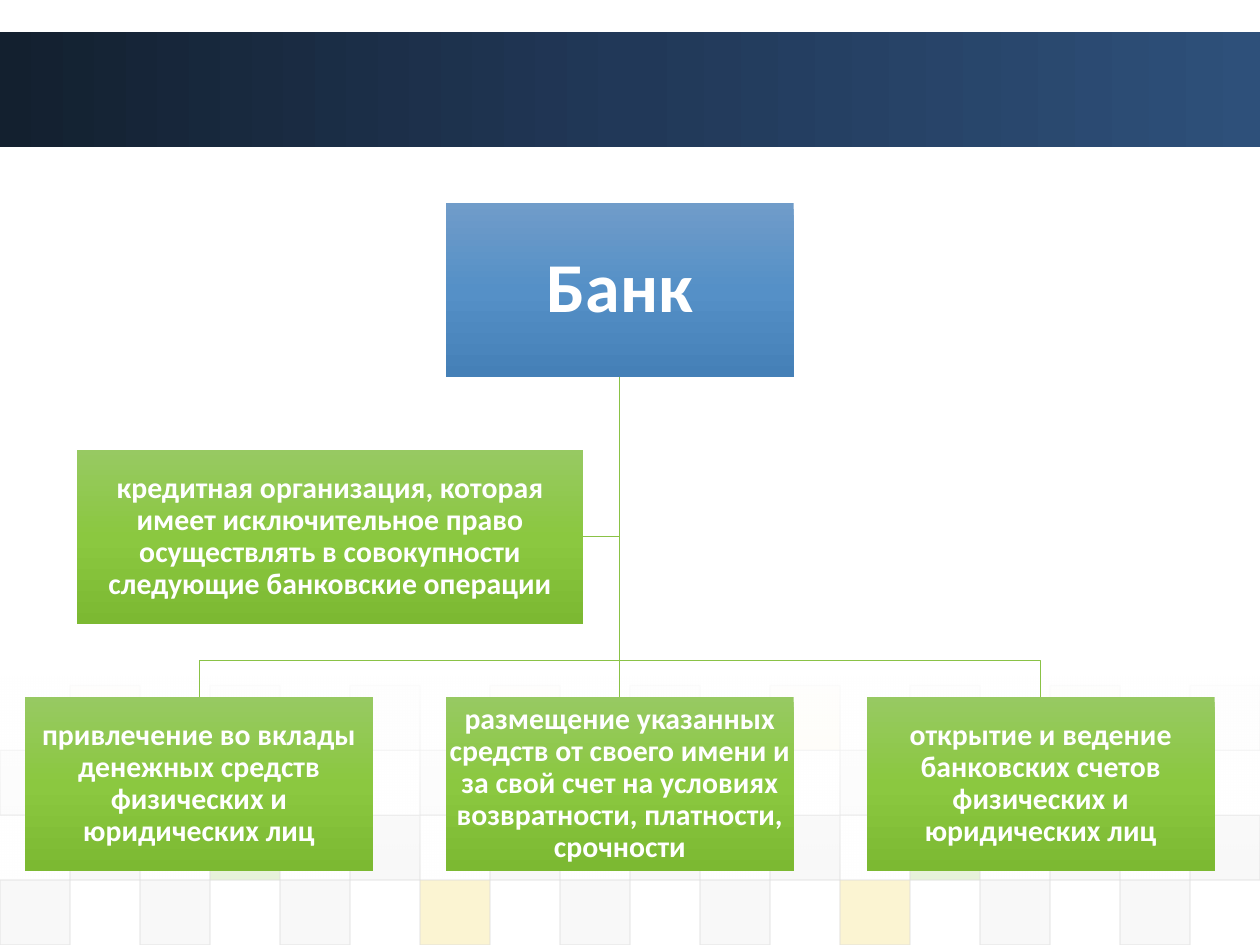
from dataclasses import dataclass

from lxml.etree import SubElement
from pptx import Presentation
from pptx.dml.color import RGBColor
from pptx.enum.shapes import MSO_CONNECTOR, MSO_SHAPE
from pptx.enum.text import MSO_ANCHOR, PP_ALIGN
from pptx.oxml.ns import qn
from pptx.util import Inches, Pt

W, H = 10, 7.5
COLORS = dict(grey="DDDDDD", light="EAEAEA", green="8AC246", yellow="EFC821", white="FFFFFF")
GRADIENTS = dict(
    header=["13202F", "213858", "2E507A"],
    blue=["709CC9", "5590C7", "4580B7"],
    green=["97C962", "8BC840", "7CB932"],
)

# Background mosaic: a checkerboard of 18 columns
TILE_W, TILE_H, MOSAIC_TOP = W / 18, 0.515, 5.44


@dataclass
class TileRow:
    first_col: int
    opacity: int
    tints: list[str]


TILE_ROWS = [
    TileRow(1, 5, "yellow light light yellow grey yellow light green light".split()),
    TileRow(0, 10, "grey grey grey grey green grey grey grey yellow".split()),
    TileRow(1, 20, "grey green grey grey grey grey green grey grey".split()),
    TileRow(0, 20, "grey grey grey yellow grey grey yellow grey grey".split()),
]

# Organisation chart
BOX_W, BOX_H, COL_STEP = 2.76, 1.38, 3.34
COLS = [0.2 + i * COL_STEP for i in range(3)]
CENTERS = [x + BOX_W / 2 for x in COLS]
ROOT_TOP, SIDE_TOP, LEAF_TOP = 1.61, 3.57, 5.53
SIDE_LEFT, SIDE_W = 0.61, 4.02
ROOT_BOTTOM, BUS_Y = ROOT_TOP + BOX_H, 5.24


@dataclass
class Box:
    text: str
    left: float
    top: float
    width: float = BOX_W
    gradient: str = "green"
    size: int = 17
    inset: float = 0.01


BOXES = [
    Box("Банк", COLS[1], ROOT_TOP, gradient="blue", size=40, inset=0.03),
    Box("привлечение во вклады денежных средств физических и юридических лиц",
        COLS[0], LEAF_TOP),
    Box("размещение указанных средств от своего имени и за свой счет на условиях "
        "возвратности, платности, срочности", COLS[1], LEAF_TOP),
    Box("открытие и ведение банковских счетов физических и юридических лиц",
        COLS[2], LEAF_TOP),
    Box("кредитная организация, которая имеет исключительное право осуществлять "
        "в совокупности следующие банковские операции", SIDE_LEFT, SIDE_TOP, SIDE_W),
]


def rgb(name: str) -> RGBColor:
    return RGBColor.from_string(COLORS[name])


def add_rect(shapes, left: float, top: float, width: float, height: float):
    sp = shapes.add_shape(MSO_SHAPE.RECTANGLE, *map(Inches, (left, top, width, height)))
    sp.shadow.inherit = False
    sp.line.fill.background()
    return sp


def set_opacity(color_el, percent: int) -> None:
    SubElement(color_el, qn("a:alpha")).set("val", str(percent * 1000))


def set_gradient(sp, colors: list[str], angle: int, opacities=()) -> None:
    """Spread the colours evenly; the angle runs clockwise in degrees."""
    sp.fill.gradient()
    grad = sp._element.spPr.find(qn("a:gradFill"))
    stops = grad.find(qn("a:gsLst"))
    stops.clear()
    for i, color in enumerate(colors):
        gs = SubElement(stops, qn("a:gs"), pos=str(100000 * i // (len(colors) - 1)))
        clr = SubElement(gs, qn("a:srgbClr"), val=color)
        if opacities:
            set_opacity(clr, opacities[i])
    grad.find(qn("a:lin")).set("ang", str(angle * 60000))


def add_mosaic(shapes) -> None:
    for row, tiles in enumerate(TILE_ROWS):
        for i, tint in enumerate(tiles.tints):
            col = tiles.first_col + 2 * i
            sp = add_rect(shapes, col * TILE_W, MOSAIC_TOP + row * TILE_H, TILE_W, TILE_H)
            sp.fill.solid()
            sp.fill.fore_color.rgb = rgb(tint)
            sp.line.color.rgb = rgb("grey")
            sp.line.width = Pt(0.75)
            fill_clr, line_clr = sp._element.spPr.iter(qn("a:srgbClr"))
            set_opacity(fill_clr, tiles.opacity)
            set_opacity(line_clr, 60)
    veil = add_rect(shapes, 0, 5.37, W, 1.62)
    set_gradient(veil, [COLORS["white"]] * 2, 90, (90, 0))


def style_link(link) -> None:
    link.line.color.rgb = rgb("green")
    link.line.width = Pt(0.5)


def add_elbow(shapes, *points: tuple[float, float]) -> None:
    (x, y), *rest = [tuple(map(Inches, pt)) for pt in points]
    builder = shapes.build_freeform(x, y)
    builder.add_line_segments(rest, close=False)
    sp = builder.convert_to_shape()
    sp.shadow.inherit = False
    sp.fill.background()
    style_link(sp)


def add_links(shapes) -> None:
    mid, side_y = CENTERS[1], SIDE_TOP + BOX_H / 2
    root = (mid, ROOT_BOTTOM)
    add_elbow(shapes, root, (mid, side_y), (SIDE_LEFT + SIDE_W, side_y))
    for x in (CENTERS[0], CENTERS[2]):
        add_elbow(shapes, root, (mid, BUS_Y), (x, BUS_Y), (x, LEAF_TOP))
    trunk = shapes.add_connector(MSO_CONNECTOR.STRAIGHT,
                                 *map(Inches, (*root, mid, LEAF_TOP)))
    style_link(trunk)
    SubElement(trunk._element.spPr, qn("a:effectLst"))


def add_box(shapes, box: Box) -> None:
    sp = add_rect(shapes, box.left, box.top, box.width, BOX_H)
    set_gradient(sp, GRADIENTS[box.gradient], 90)
    tf = sp.text_frame
    tf.word_wrap = True
    tf.vertical_anchor = MSO_ANCHOR.MIDDLE
    for side in ("left", "right", "top", "bottom"):
        setattr(tf, f"margin_{side}", Inches(box.inset))
    p = tf.paragraphs[0]
    p.alignment, p.line_spacing = PP_ALIGN.CENTER, 0.9
    r = p.add_run()
    r.text = box.text
    for name, value in dict(name="Calibri", size=Pt(box.size), bold=True).items():
        setattr(r.font, name, value)
    r.font.color.rgb = rgb("white")


def main() -> None:
    prs = Presentation()
    prs.slide_width, prs.slide_height = Inches(W), Inches(H)
    s = prs.slides.add_slide(prs.slide_layouts[6])
    header = add_rect(s.shapes, 0, 0.25, W, 0.92)
    set_gradient(header, GRADIENTS["header"], 0)
    add_mosaic(s.shapes)
    add_links(s.shapes)
    for box in BOXES:
        add_box(s.shapes, box)
    prs.save("out.pptx")


if __name__ == "__main__":
    main()
